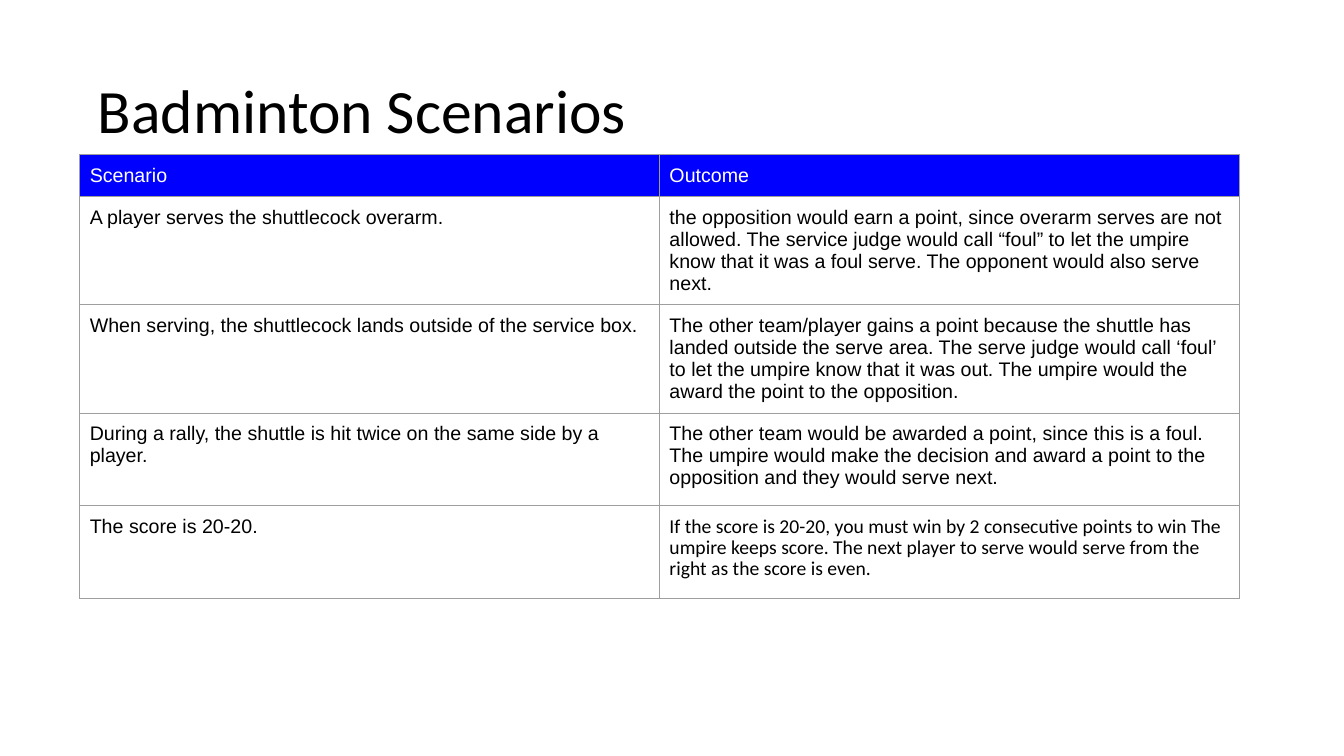
from lxml.etree import SubElement
from pptx import Presentation
from pptx.dml.color import RGBColor
from pptx.enum.text import MSO_ANCHOR, PP_ALIGN
from pptx.oxml.ns import qn
from pptx.util import Inches, Pt

TITLE = "Badminton Scenarios"
ROWS = [
    ("Scenario", "Outcome"),
    ("A player serves the shuttlecock overarm.",
     "the opposition would earn a point, since overarm serves are not allowed. "
     "The service judge would call “foul” to let the umpire know that it was a "
     "foul serve. The opponent would also serve next."),
    ("When serving, the shuttlecock lands outside of the service box.",
     "The other team/player gains a point because the shuttle has landed outside "
     "the serve area. The serve judge would call ‘foul’ to let the umpire know "
     "that it was out. The umpire would the award the point to the opposition."),
    ("During a rally, the shuttle is hit twice on the same side by a player.",
     "The other team would be awarded a point, since this is a foul. The umpire "
     "would make the decision and award a point to the opposition and they would "
     "serve next."),
    ("The score is 20-20.",
     "If the score is 20-20, you must win by 2 consecutive points to win The "
     "umpire keeps score. The next player to serve would serve from the right as "
     "the score is even."),
]
ROW_HEIGHTS = [0.36, 0.91, 0.92, 0.92, 0.92]
COLUMN_WIDTH = 5.75
CALIBRI_CELL = (4, 1)

BLACK = RGBColor(0x00, 0x00, 0x00)
WHITE = RGBColor(0xFF, 0xFF, 0xFF)
BLUE = RGBColor(0x00, 0x00, 0xFF)
BORDER_GRAY = RGBColor(0x9E, 0x9E, 0x9E)


def set_margins(target, margin):
    """Give a cell or text frame the same margin on all four sides."""
    target.margin_left = target.margin_right = margin
    target.margin_top = target.margin_bottom = margin


def style_paragraph(paragraph, font_name, size, color, line_spacing):
    paragraph.font.name = font_name
    paragraph.font.size = Pt(size)
    paragraph.font.color.rgb = color
    paragraph.line_spacing = line_spacing


def add_borders(cell):
    properties = cell._tc.get_or_add_tcPr()
    for position, side in enumerate(("lnL", "lnR", "lnT", "lnB")):
        line = SubElement(properties, qn(f"a:{side}"), w=str(Pt(0.75)))
        fill = SubElement(line, qn("a:solidFill"))
        SubElement(fill, qn("a:srgbClr"), val=str(BORDER_GRAY))
        properties.insert(position, line)  # borders come before the cell fill


def add_title(slide):
    title = slide.shapes.title
    title.left, title.top = Inches(0.92), Inches(0.4)
    title.width, title.height = Inches(11.5), Inches(1.45)
    frame = title.text_frame
    frame.text = TITLE
    frame.word_wrap = True
    frame.vertical_anchor = MSO_ANCHOR.MIDDLE
    set_margins(frame, Inches(0.05))
    paragraph = frame.paragraphs[0]
    paragraph.alignment = PP_ALIGN.LEFT
    style_paragraph(paragraph, "Calibri", 44, BLACK, 0.9)


def add_scenario_table(slide):
    table = slide.shapes.add_table(
        len(ROWS), 2, Inches(0.79), Inches(1.53),
        Inches(2 * COLUMN_WIDTH), Inches(sum(ROW_HEIGHTS))).table
    table.first_row = table.horz_banding = False
    for row, height in zip(table.rows, ROW_HEIGHTS):
        row.height = Inches(height)
    for row_index, texts in enumerate(ROWS):
        is_header = row_index == 0
        for column_index, text in enumerate(texts):
            cell = table.cell(row_index, column_index)
            cell.text = text
            set_margins(cell, Inches(0.1))
            if is_header:
                cell.fill.solid()
                cell.fill.fore_color.rgb = BLUE
            else:
                cell.fill.background()
            add_borders(cell)
            is_calibri = (row_index, column_index) == CALIBRI_CELL
            style_paragraph(cell.text_frame.paragraphs[0],
                            "Calibri" if is_calibri else "Arial", 14,
                            WHITE if is_header else BLACK,
                            0.9 if is_calibri else 1.0)


def main():
    presentation = Presentation()
    presentation.slide_width = Inches(13.33)
    presentation.slide_height = Inches(7.5)
    title_only = presentation.slide_layouts[5]
    slide = presentation.slides.add_slide(title_only)
    add_title(slide)
    add_scenario_table(slide)
    presentation.save("out.pptx")


if __name__ == "__main__":
    main()
